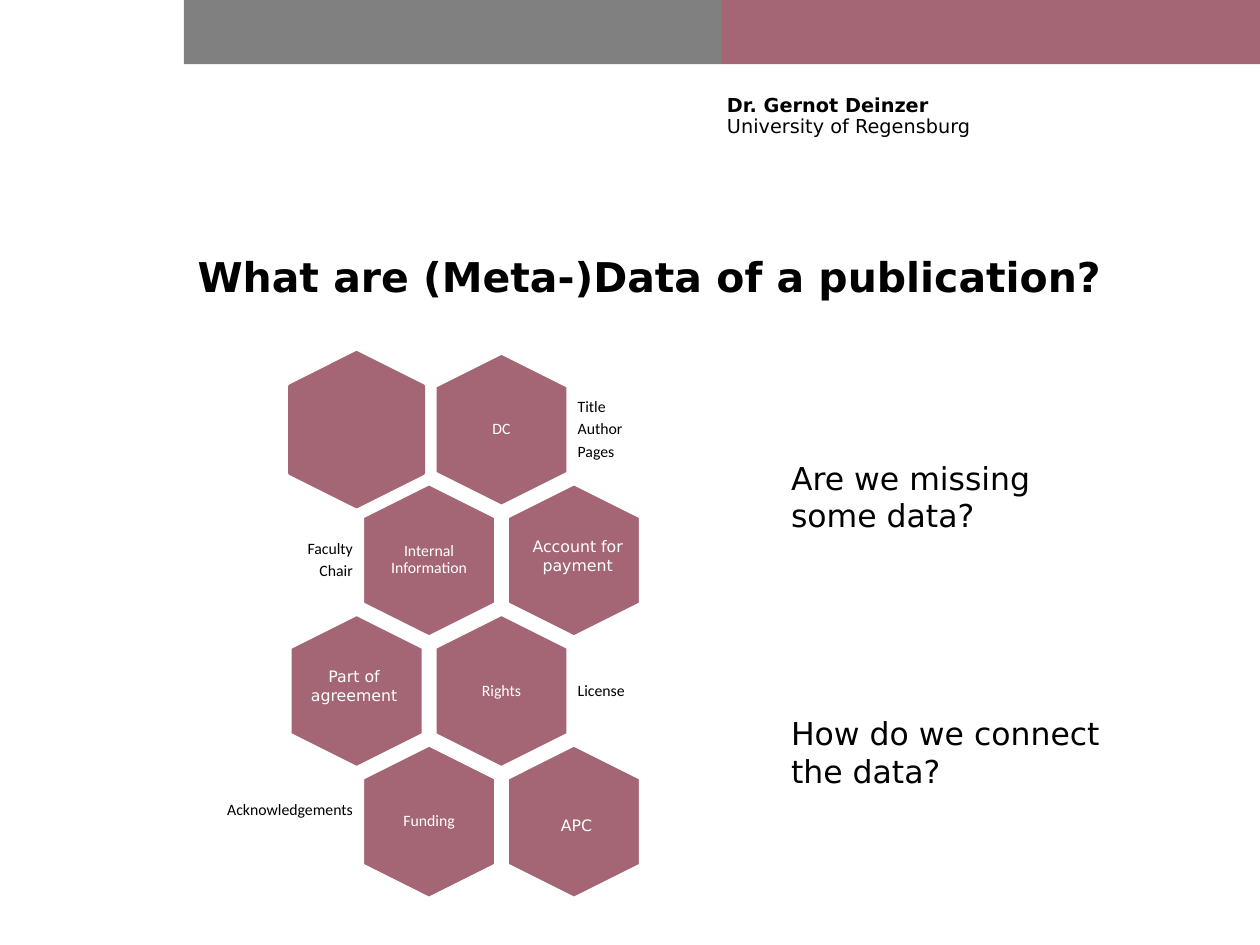
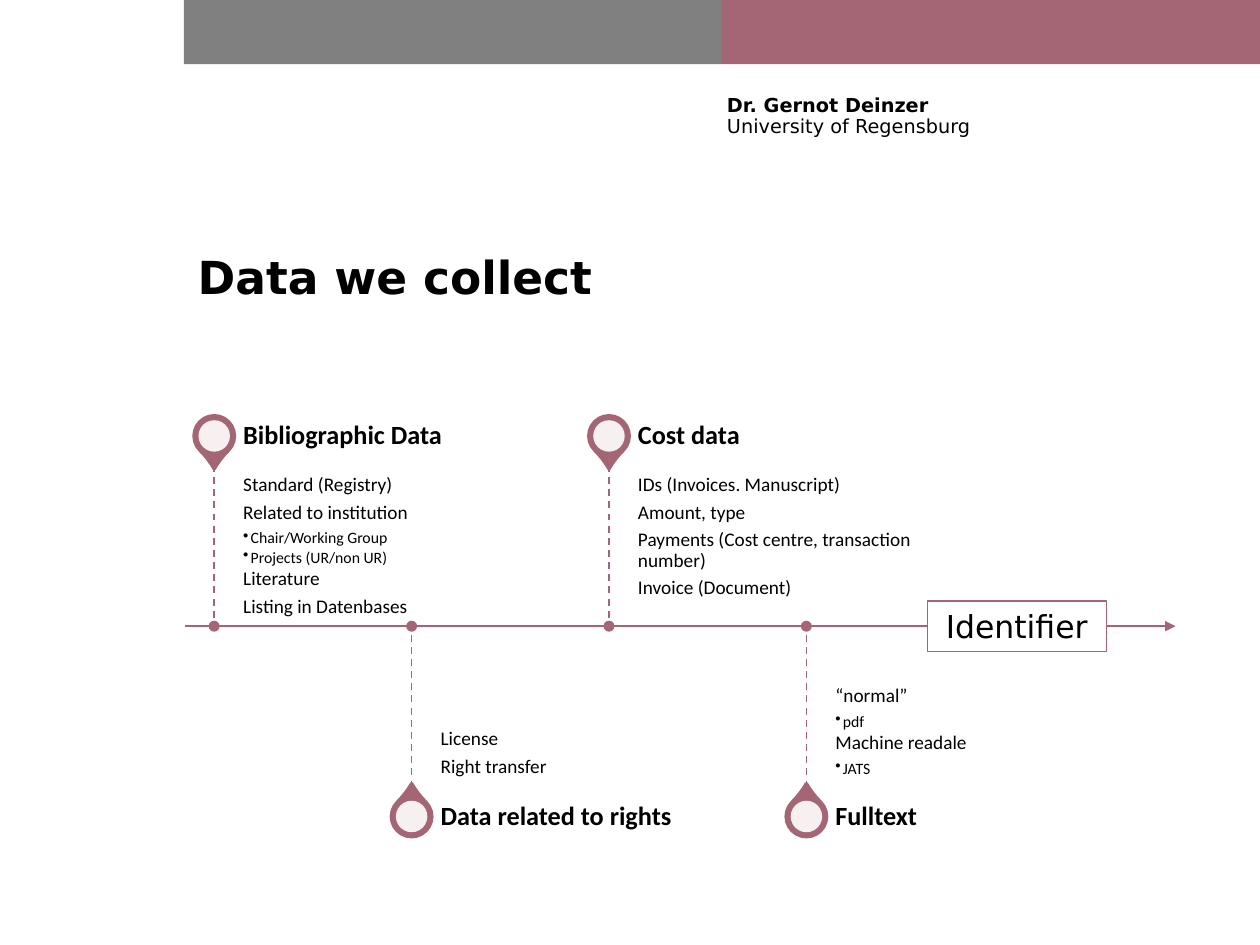
from dataclasses import dataclass, replace
from typing import Optional, Sequence

from lxml import etree
from pptx import Presentation
from pptx import util as u
from pptx.dml.color import RGBColor
from pptx.enum import dml, shapes, text
from pptx.oxml import ns

# Slide grid: 100 columns by 75 rows of square cells
COLUMNS, ROWS = 100, 75
CELL = u.Inches(0.1)

ROSE = RGBColor(0xA4, 0x66, 0x74)
GRAY = RGBColor(0x80, 0x80, 0x80)
WHITE = RGBColor(0xFF, 0xFF, 0xFF)
BLACK = RGBColor(0x00, 0x00, 0x00)

LEFT, CENTER, RIGHT = text.PP_ALIGN.LEFT, text.PP_ALIGN.CENTER, text.PP_ALIGN.RIGHT
TOP, MIDDLE, BOTTOM = text.MSO_ANCHOR.TOP, text.MSO_ANCHOR.MIDDLE, text.MSO_ANCHOR.BOTTOM
HEXAGON, TEARDROP = shapes.MSO_SHAPE.HEXAGON, shapes.MSO_SHAPE.TEAR
OVAL, RECTANGLE = shapes.MSO_SHAPE.OVAL, shapes.MSO_SHAPE.RECTANGLE


@dataclass(frozen=True)
class Box:
    """Left, top, width and height in grid cells."""
    col: float
    row: float
    cols: float
    rows: float

    @classmethod
    def around(cls, x: float, y: float, cols: float, rows: float) -> "Box":
        return cls(x - cols / 2, y - rows / 2, cols, rows)

    def emu(self) -> list[int]:
        return [round(v * CELL) for v in (self.col, self.row, self.cols, self.rows)]


@dataclass(frozen=True)
class Style:
    size: float
    font: str = "DejaVu Sans"
    color: RGBColor = BLACK
    bold: bool = False
    align: text.PP_ALIGN = LEFT
    spacing: Optional[float] = None
    after: float = 0  # space after, as a share of the size


@dataclass(frozen=True)
class Bullet:
    label: str


@dataclass(frozen=True)
class Hexagon:
    """A honeycomb cell; step counts half pitches from the left."""
    step: int
    tier: int
    label: str = ""
    plain: bool = False
    nudge: tuple[float, float] = (0, 0)
    examples: tuple[str, ...] = ()
    side: int = 1
    shift: float = 0
    outline: RGBColor = WHITE


@dataclass(frozen=True)
class Milestone:
    heading: str
    details: tuple[str | Bullet, ...]


TITLE = Style(26, bold=True)
QUESTION = Style(18)
PLAIN_LABEL = Style(9, color=WHITE, align=CENTER)
EXAMPLE = Style(9, "Calibri", spacing=0.9, after=0.35)
HEX_LABEL = replace(EXAMPLE, color=WHITE, align=CENTER)
DETAIL = replace(EXAMPLE, size=11)
SUBDETAIL = replace(EXAMPLE, after=0.15)
HEADING = replace(EXAMPLE, size=15, bold=True)

DEFAULT_INSETS = (1, 0.5, 1, 0.5)
TIGHT_INSETS = (0.4, 0.4, 0.4, 0.4)

HEX_ORIGIN = (28.3, 34.1)
HEX_HALF_PITCH, HEX_TIER = 5.75, 10.37
HEX_LENGTH, HEX_BREADTH = 12.2, 10.6
EXAMPLES_GAP, EXAMPLES_COLS, EXAMPLES_ROWS = 5.65, 13.4, 7.3
HEXAGONS = (
    Hexagon(2, 0, "DC", examples=("Title", "Author", "Pages")),
    Hexagon(0, 0, outline=ROSE),
    Hexagon(1, 1, "Internal Information", examples=("Faculty", "Chair"), side=-1),
    Hexagon(3, 1, "Account for payment", plain=True, nudge=(0.3, -0.4)),
    Hexagon(2, 2, "Rights", examples=("License",)),
    Hexagon(0, 2, "Part of agreement", plain=True, nudge=(-0.2, -0.4)),
    Hexagon(1, 3, "Funding", examples=("Acknowledgements",), side=-1, shift=-0.9),
    Hexagon(3, 3, "APC", plain=True, nudge=(0.2, 0.3)),
)
QUESTIONS = {35.9: "Are we missing some data?", 56.2: "How do we connect the data?"}

AXIS_ROW, AXIS_START, AXIS_END = 49.7, 14.7, 93.3
PIN_START, PIN_END = 17, 64
PIN_REACH, STEM = 15.1, 12.8
MILESTONES = (
    Milestone("Bibliographic Data", (
        "Standard (Registry)", "Related to institution",
        Bullet("Chair/Working Group"), Bullet("Projects (UR/non UR)"),
        "Literature", "Listing in Datenbases")),
    Milestone("Data related to rights", ("License", "Right transfer")),
    Milestone("Cost data", (
        "IDs (Invoices. Manuscript)", "Amount, type",
        "Payments (Cost centre, transaction number)", "Invoice (Document)")),
    Milestone("Fulltext", (
        "“normal”", Bullet("pdf"), "Machine readale", Bullet("JATS"))),
)


def add_run(paragraph, words: str, style: Style) -> None:
    run = paragraph.add_run()
    run.text = words
    run.font.size = u.Pt(style.size)
    run.font.name = style.font
    run.font.bold = style.bold
    run.font.color.rgb = style.color


def add_bullet_mark(paragraph) -> None:
    properties = paragraph._p.get_or_add_pPr()
    indent = u.Inches(0.06)
    properties.set("marL", str(indent))
    properties.set("indent", str(-indent))
    etree.SubElement(properties, ns.qn("a:buChar")).set("char", "•")


def write(frame, lines: Sequence[str | Bullet], style: Style,
          anchor=TOP, insets=DEFAULT_INSETS) -> None:
    frame.word_wrap = True
    frame.vertical_anchor = anchor
    (frame.margin_left, frame.margin_top,
     frame.margin_right, frame.margin_bottom) = [round(i * CELL) for i in insets]
    for index, line in enumerate(lines):
        paragraph = frame.add_paragraph() if index else frame.paragraphs[0]
        words, look = line, style
        if isinstance(line, Bullet):
            words, look = line.label, SUBDETAIL
            add_bullet_mark(paragraph)
        paragraph.alignment = look.align
        if look.spacing:
            paragraph.line_spacing = look.spacing
        if look.after:
            paragraph.space_after = u.Pt(look.size * look.after)
        add_run(paragraph, words, look)


def add_text(slide, box: Box, lines: Sequence[str | Bullet], style: Style,
             anchor=TOP, insets=DEFAULT_INSETS) -> None:
    write(slide.shapes.add_textbox(*box.emu()).text_frame, lines, style, anchor, insets)


def add_figure(slide, kind, box: Box, fill: RGBColor,
               outline: Optional[RGBColor] = None, weight: float = 0):
    figure = slide.shapes.add_shape(kind, *box.emu())
    figure.shadow.inherit = False
    figure.fill.solid()
    figure.fill.fore_color.rgb = fill
    if outline is None:
        figure.line.fill.background()
    else:
        figure.line.color.rgb = outline
        figure.line.width = u.Pt(weight)
    return figure


def add_line(slide, start: tuple[float, float], end: tuple[float, float], weight: float,
             dashed: bool = False, arrow: bool = False) -> None:
    line = slide.shapes.add_connector(
        shapes.MSO_CONNECTOR.STRAIGHT, *(round(v * CELL) for v in (*start, *end)))
    line.line.color.rgb = ROSE
    line.line.width = u.Pt(weight)
    if dashed:
        line.line.dash_style = dml.MSO_LINE.DASH
    properties = line._element.spPr
    if arrow:
        outline = properties.find(ns.qn("a:ln"))
        etree.SubElement(outline, ns.qn("a:tailEnd")).set("type", "triangle")
    etree.SubElement(properties, ns.qn("a:effectLst"))


def set_opacity(figure, percent: int) -> None:
    color = figure._element.spPr.find(ns.qn("a:solidFill"))[0]
    etree.SubElement(color, ns.qn("a:alpha")).set("val", str(percent * 1000))


def add_base_slide(deck, title: str, title_style: Style = TITLE):
    """Add a slide with the shared bands, author block and title."""
    slide = deck.slides.add_slide(deck.slide_layouts[6])
    band_start = 14.6
    band_cols = (COLUMNS - band_start) / 2
    for index, color in enumerate((GRAY, ROSE)):
        add_figure(slide, RECTANGLE,
                   Box(band_start + index * band_cols, 0, band_cols, 5.1), color)

    author_box = Box(57.7, 7.6, 35.3, 5.5)
    author = slide.shapes.add_textbox(*author_box.emu()).text_frame
    write(author, ["Dr. Gernot Deinzer"], Style(11, bold=True), insets=(0, 0, 0, 0))
    paragraph = author.paragraphs[0]
    paragraph.line_spacing = u.Pt(12)
    paragraph.add_line_break()
    add_run(paragraph, "University of Regensburg", Style(11))

    add_text(slide, Box(14.7, 18.1, 78.6, 7.6), [title], title_style, MIDDLE)
    return slide


def add_hexagon(slide, cell: Hexagon) -> None:
    x = HEX_ORIGIN[0] + cell.step * HEX_HALF_PITCH
    y = HEX_ORIGIN[1] + cell.tier * HEX_TIER
    hexagon = add_figure(slide, HEXAGON, Box.around(x, y, HEX_LENGTH, HEX_BREADTH),
                         ROSE, cell.outline, 2)
    hexagon.adjustments[0] = 0.25
    hexagon.rotation = 90
    if cell.plain:
        dx, dy = cell.nudge
        add_text(slide, Box.around(x + dx, y + dy, 11.4, 4), [cell.label],
                 PLAIN_LABEL, MIDDLE)
    elif cell.label:
        add_text(slide, Box.around(x, y, 7.3, 8.4), [cell.label],
                 HEX_LABEL, MIDDLE, TIGHT_INSETS)
    if cell.examples:
        examples_x = x + cell.side * (EXAMPLES_GAP + EXAMPLES_COLS / 2)
        style = replace(EXAMPLE, align=LEFT if cell.side > 0 else RIGHT)
        add_text(slide, Box.around(examples_x, y + cell.shift, EXAMPLES_COLS, EXAMPLES_ROWS),
                 cell.examples, style, MIDDLE, TIGHT_INSETS)


def add_milestone(slide, milestone: Milestone, x: float, above: bool) -> None:
    side = -1 if above else 1
    pin_y = AXIS_ROW + side * PIN_REACH
    text_col, text_cols = x + 2.3, 26.1

    pin = add_figure(slide, TEARDROP, Box.around(x, pin_y, 3.2, 3.2), ROSE, ROSE, 2)
    pin.adjustments[0] = 1.15
    pin.rotation = 135 if above else 315
    set_opacity(add_figure(slide, OVAL, Box.around(x, pin_y, 2.5, 2.5), WHITE), 90)

    details_row = AXIS_ROW - STEM if above else AXIS_ROW
    add_text(slide, Box(text_col, details_row, text_cols, STEM), milestone.details, DETAIL,
             TOP if above else BOTTOM, (0, 0.8, 0.8, 1.1) if above else (0, 1.1, 0, 0.8))
    add_text(slide, Box(text_col, pin_y - 2.25, text_cols, 4.5), [milestone.heading],
             HEADING, MIDDLE, (0, 0, 1, 0))
    add_line(slide, (x, AXIS_ROW + side * STEM), (x, AXIS_ROW), 1, dashed=True)
    add_figure(slide, OVAL, Box.around(x, AXIS_ROW, 0.8, 0.8), ROSE, ROSE, 0.5)


def build_metadata_slide(deck) -> None:
    slide = add_base_slide(deck, "What are (Meta-)Data of a publication?",
                           replace(TITLE, size=23.4))
    for cell in HEXAGONS:
        add_hexagon(slide, cell)
    for row, question in QUESTIONS.items():
        add_text(slide, Box(61.8, row, 26.8, 7.1), [question], QUESTION)


def build_collection_slide(deck) -> None:
    slide = add_base_slide(deck, "Data we collect")
    add_line(slide, (AXIS_START, AXIS_ROW), (AXIS_END, AXIS_ROW), 1.5, arrow=True)
    pitch = (PIN_END - PIN_START) / (len(MILESTONES) - 1)
    for index, milestone in enumerate(MILESTONES):
        add_milestone(slide, milestone, PIN_START + index * pitch, above=index % 2 == 0)
    identifier = add_figure(slide, RECTANGLE, Box.around(80.7, AXIS_ROW, 14.2, 4),
                            WHITE, ROSE, 0.75)
    write(identifier.text_frame, ["Identifier"], replace(QUESTION, align=CENTER), MIDDLE)


def main() -> None:
    deck = Presentation()
    deck.slide_width, deck.slide_height = COLUMNS * CELL, ROWS * CELL
    build_metadata_slide(deck)
    build_collection_slide(deck)
    deck.save("out.pptx")


if __name__ == "__main__":
    main()
